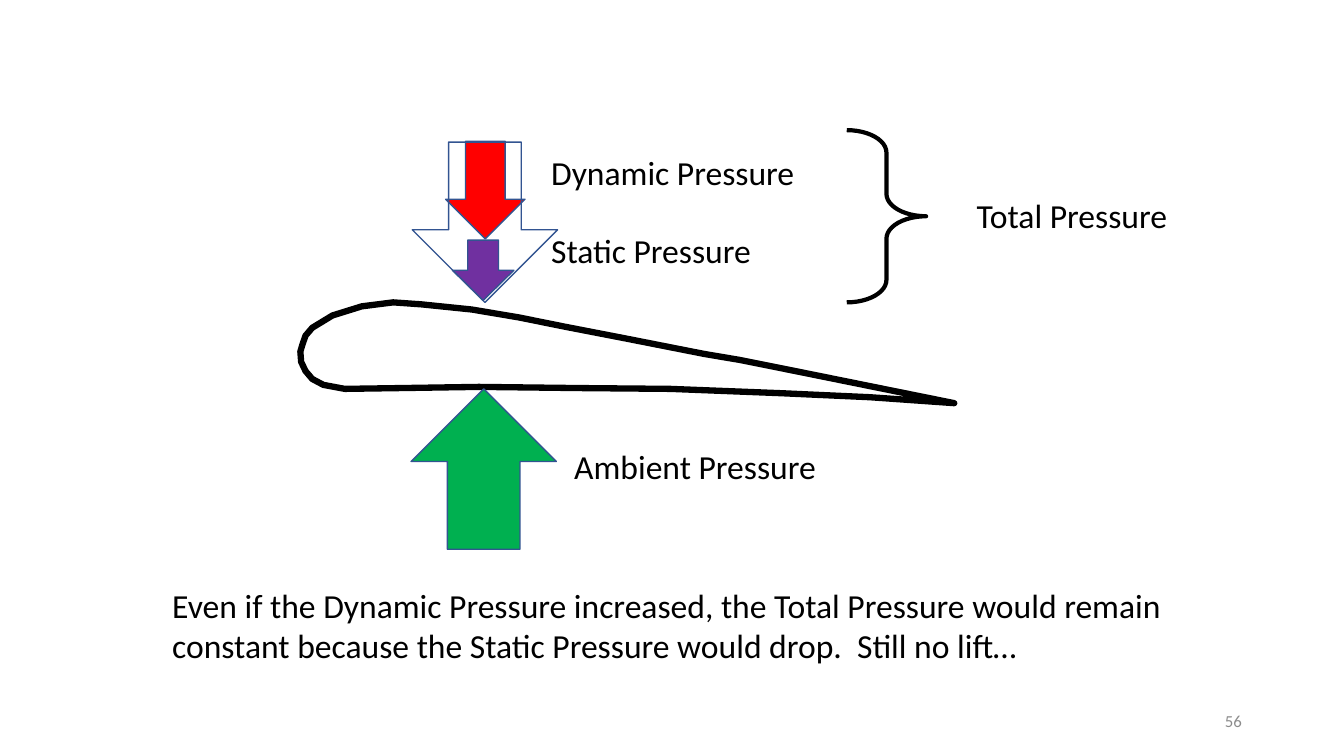
from dataclasses import dataclass

from pptx import Presentation
from pptx.dml.color import RGBColor
from pptx.enum.shapes import MSO_SHAPE as Preset
from pptx.enum.text import MSO_ANCHOR as Anchor, PP_ALIGN as Align
from pptx.util import Cm, Pt


@dataclass(frozen=True)
class Theme:
    font: str = "Calibri"
    body_size: int = 24
    number_size: int = 12
    ink: str = "000000"
    number_grey: str = "8C8C8C"
    arrow_edge: str = "325491"
    static: str = "7030A0"
    dynamic: str = "FF0000"
    ambient: str = "00B050"


theme = Theme()


def paint(shape, fill, line, width):
    """Fill the shape (None leaves it empty) and draw its edge, without shadow."""
    shape.shadow.inherit = False
    if fill:
        shape.fill.solid()
        shape.fill.fore_color.rgb = RGBColor.from_string(fill)
    else:
        shape.fill.background()
    shape.line.color.rgb = RGBColor.from_string(line)
    shape.line.width = Pt(width)


def add_text(text, left, top, width, height, size=theme.body_size, color=theme.ink):
    box = page.shapes.add_textbox(Cm(left), Cm(top), Cm(width), Cm(height))
    box.text_frame.word_wrap = True
    box.text_frame.text = text
    font = box.text_frame.paragraphs[0].runs[0].font
    font.name = theme.font
    font.size = Pt(size)
    font.color.rgb = RGBColor.from_string(color)
    return box


deck = Presentation()
deck.slide_width, deck.slide_height = Cm(33.87), Cm(19.05)
page = deck.slides.add_slide(deck.slide_layouts[6])

# Wing section: nose, upper surface to the trailing edge, lower surface back
wing_points = [
    (7.59, 9.12), (7.57, 8.86), (7.62, 8.69), (7.7, 8.46), (7.87, 8.26),
    (8.38, 7.95), (9.12, 7.72), (9.91, 7.62), (10.62, 7.67), (11.89, 7.8),
    (13.08, 8), (14.22, 8.23), (15.77, 8.53), (17.75, 8.92), (18.64, 9.07),
    (19.79, 9.3), (24.05, 10.16), (21.92, 10.01), (19.71, 9.91), (16.89, 9.8),
    (14.63, 9.78), (12.07, 9.75), (10.08, 9.78), (8.69, 9.8), (8.15, 9.7),
    (7.87, 9.55), (7.7, 9.35),
]
outline = [(Cm(x), Cm(y)) for x, y in wing_points]
builder = page.shapes.build_freeform(*outline[0])
builder.add_line_segments(outline[1:], close=True)
paint(builder.convert_to_shape(), None, theme.ink, 4.5)

# Pressure arrows: left, top, width, height, rotation, fill
arrows = [
    (11.4, 6.05, 1.55, 1.52, 180, theme.static),
    (11.23, 3.56, 2, 2.46, 180, theme.dynamic),
    (10.39, 3.58, 3.66, 4.04, 180, None),
    (10.36, 9.8, 3.66, 4.04, 0, theme.ambient),
]
for left, top, width, height, rotation, fill in arrows:
    arrow = page.shapes.add_shape(Preset.UP_ARROW, Cm(left), Cm(top), Cm(width), Cm(height))
    arrow.rotation = rotation
    paint(arrow, fill, theme.arrow_edge, 1)

brace = page.shapes.add_shape(Preset.RIGHT_BRACE, Cm(21.34), Cm(3.28), Cm(2), Cm(4.34))
brace.adjustments[0] = 0.283
paint(brace, None, theme.ink, 3)

labels = [
    ("Dynamic Pressure", 13.64, 3.71),
    ("Static Pressure", 13.64, 5.66),
    ("Total Pressure", 24.36, 4.78),
    ("Ambient Pressure", 14.22, 11.1),
]
for text, left, top in labels:
    add_text(text, left, top, 6.91, 1.27)

add_text(
    "Even if the Dynamic Pressure increased, the Total Pressure would remain "
    "constant because the Static Pressure would drop.  Still no lift…",
    4.09, 14.61, 26.39, 2.31,
)

number = add_text("56", 23.93, 17.65, 7.62, 1.02, theme.number_size, theme.number_grey)
number.text_frame.vertical_anchor = Anchor.MIDDLE
number.text_frame.paragraphs[0].alignment = Align.RIGHT

deck.save("out.pptx")
